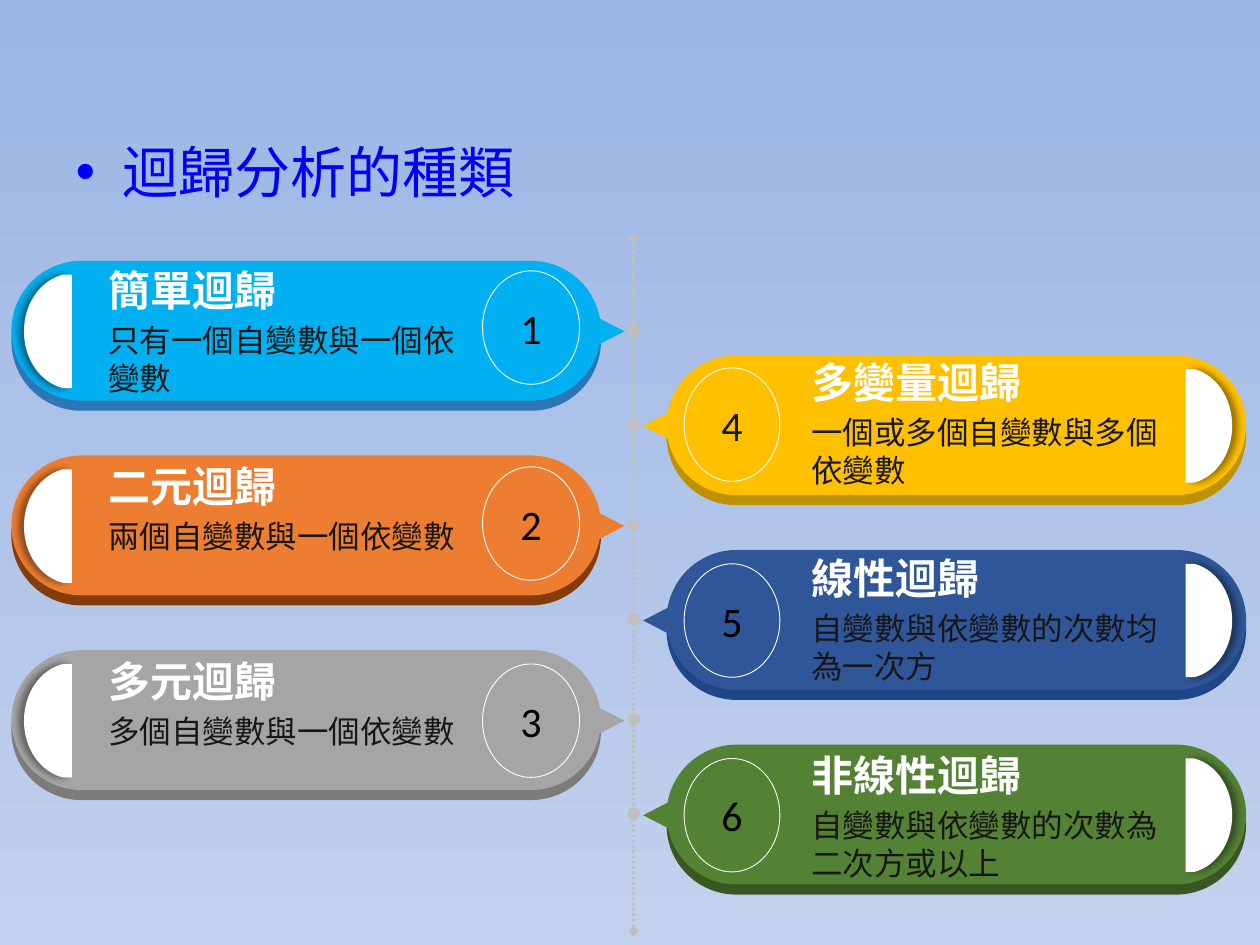
from dataclasses import dataclass

from lxml import etree
from pptx import Presentation
from pptx import util as u
from pptx.dml import color
from pptx.enum import dml, shapes, text
from pptx.oxml import ns

Inches, Pt = u.Inches, u.Pt
SHAPE = shapes.MSO_SHAPE


@dataclass(frozen=True)
class Theme:
    cjk: str = "Noto Sans CJK SC"
    latin: str = "Calibri"
    sky: tuple = ("9AB5E4", "C2D1ED")
    title: str = "0000FF"
    white: str = "FFFFFF"
    ink: str = "181717"
    number: str = "000000"
    rail: str = "BFBFBF"
    title_size: int = 32
    head_size: int = 24
    body_size: int = 18


@dataclass(frozen=True)
class Banner:
    number: str
    head: str
    body: str
    face: str
    edge: str
    disc_y: float
    label_y: float
    label_h: float = 1.14
    ink: str = Theme.number


@dataclass(frozen=True)
class Side:
    x: float
    w: float
    top: float
    disc_x: float
    disc_w: float
    pointer_x: float
    turn: int
    cap_x: float
    cap_w: float
    cap_turn: int
    label_x: float
    label_w: float
    banners: tuple


T = Theme()
STEP, BAR_H, LIP = 1.545, 1.11, 0.08
RAIL_X, DOT, DOT_DROP = 5.03, 0.1, 0.5
CAP_CURVE = ((0, 0), (0.19, 0), (0.65, 0.05), (1, 0.25), (1, 0.5),
             (1, 0.75), (0.65, 0.95), (0.19, 1), (0, 1))

LEFT = Side(0.09, 4.68, 2.07, 3.74, 0.77, 4.6, 90, 0.1, 0.38, 180, 0.7, 3, (
    Banner("1", "簡單迴歸", "只有一個自變數與一個依變數", "00B0F0", "2E75B6", 0.08, 0),
    Banner("2", "二元迴歸", "兩個自變數與一個依變數", "ED7D31", "843C0B", 0.09, 0.01, 0.83),
    Banner("3", "多元迴歸", "多個自變數與一個依變數", "A5A5A5", "7C7C7C", 0.11, 0.01, 0.83),
))
RIGHT = Side(5.29, 4.6, 2.82, 0.14, 0.76, -0.19, 270, 4.12, 0.37, 0, 1.08, 2.95, (
    Banner("4", "多變量迴歸", "一個或多個自變數與多個依變數", "FFC000", "BF9000", 0.1, -0.02,
           ink=T.ink),
    Banner("5", "線性迴歸", "自變數與依變數的次數均為一次方", "2F5698", "204688", 0.11, -0.01),
    Banner("6", "非線性迴歸", "自變數與依變數的次數為二次方或以上", "548235", "385723", 0.11, 0.01),
))


def rgb(value):
    return color.RGBColor.from_string(value)


def style(p, size, ink, name, bold=False):
    p.font.size, p.font.bold, p.font.name = Pt(size), bold, name
    p.font.color.rgb = rgb(ink)
    props = p._p.get_or_add_pPr().get_or_add_defRPr()
    etree.SubElement(props, ns.qn("a:ea"), typeface=name)


def paint(sp, fill):
    sp.shadow.inherit = False
    sp.fill.solid()
    sp.fill.fore_color.rgb = rgb(fill)
    sp.line.fill.background()


def add_solid(group, kind, x, y, w, h, fill):
    sp = group.shapes.add_shape(kind, Inches(x), Inches(y), Inches(w), Inches(h))
    paint(sp, fill)
    return sp


def bend(sp, starts):
    lines = list(sp._element.iter(ns.qn("a:lnTo")))
    for start in starts:
        curve = etree.Element(ns.qn("a:cubicBezTo"))
        lines[start].addprevious(curve)
        for line in lines[start:start + 3]:
            curve.append(line[0])
            line.getparent().remove(line)


def add_cap(group, x, y, w, h, turn):
    points = [(Inches(x + w * fx), Inches(y + h * fy)) for fx, fy in CAP_CURVE]
    builder = group.shapes.build_freeform(*points[0])
    builder.add_line_segments(points[1:], close=True)
    sp = builder.convert_to_shape()
    bend(sp, (1, 4))
    sp.rotation = turn
    paint(sp, T.white)
    effects = sp._element.spPr.find(ns.qn("a:effectLst"))
    shadow = etree.SubElement(effects, ns.qn("a:outerShdw"), blurRad=str(Pt(4)),
                              dist=str(Pt(3)), dir=str(turn * 60000), rotWithShape="0")
    black = etree.SubElement(shadow, ns.qn("a:srgbClr"), val="000000")
    etree.SubElement(black, ns.qn("a:alpha"), val="40000")


def add_disc(group, x, y, w, h, number, ink):
    sp = group.shapes.add_shape(SHAPE.OVAL, Inches(x), Inches(y), Inches(w), Inches(h))
    sp.shadow.inherit = False
    sp.fill.background()
    sp.line.color.rgb, sp.line.width = rgb(T.white), Pt(0.5)
    tf = sp.text_frame
    tf.word_wrap, tf.vertical_anchor = False, text.MSO_ANCHOR.MIDDLE
    tf.margin_left = tf.margin_right = Inches(0.13)
    tf.margin_top = tf.margin_bottom = Inches(0.07)
    p = tf.paragraphs[0]
    p.text, p.alignment = number, text.PP_ALIGN.CENTER
    style(p, T.head_size, ink, T.latin)


def add_label(group, x, y, w, h, head, body):
    tf = group.shapes.add_textbox(Inches(x), Inches(y), Inches(w), Inches(h)).text_frame
    tf.word_wrap, tf.auto_size = True, text.MSO_AUTO_SIZE.SHAPE_TO_FIT_TEXT
    tf.margin_left = tf.margin_right = Inches(0.07)
    tf.margin_top = tf.margin_bottom = Inches(0.03)
    p = tf.paragraphs[0]
    p.text = head
    style(p, T.head_size, T.white, T.cjk, bold=True)
    p = tf.add_paragraph()
    p.text, p.space_before = body, Pt(3.6)
    style(p, T.body_size, T.ink, T.cjk)


def add_banner(s, side, y, b):
    group = s.shapes.add_group_shape()
    for top, fill in ((y + LIP, b.edge), (y, b.face)):
        bar = add_solid(group, SHAPE.ROUNDED_RECTANGLE, side.x, top, side.w, BAR_H, fill)
        bar.adjustments[0] = 0.5
    pointer = add_solid(group, SHAPE.ISOSCELES_TRIANGLE, side.x + side.pointer_x,
                        y + 0.43, 0.27, 0.26, b.face)
    pointer.rotation = side.turn
    add_disc(group, side.x + side.disc_x, y + b.disc_y, side.disc_w, 0.9, b.number, b.ink)
    add_cap(group, side.x + side.cap_x, y + 0.11, side.cap_w, 0.9, side.cap_turn)
    add_label(group, side.x + side.label_x, y + b.label_y, side.label_w, b.label_h,
              b.head, b.body)


def add_rail(s, top, bottom, dot_tops):
    group = s.shapes.add_group_shape()
    line = group.shapes.add_connector(shapes.MSO_CONNECTOR.STRAIGHT, Inches(RAIL_X),
                                      Inches(bottom), Inches(RAIL_X), Inches(top))
    line.line.color.rgb, line.line.width = rgb(T.rail), Pt(1.5)
    line.line.dash_style = dml.MSO_LINE.ROUND_DOT
    for end in ("a:headEnd", "a:tailEnd"):
        etree.SubElement(line.line._get_or_add_ln(), ns.qn(end), type="diamond")
    etree.SubElement(line._element.spPr, ns.qn("a:effectLst"))
    for y in dot_tops:
        add_solid(group, SHAPE.FLOWCHART_CONNECTOR, RAIL_X - DOT / 2, y, DOT, DOT, T.rail)


def add_heading(s, x, y, w, h):
    s.shapes.title._element.getparent().remove(s.shapes.title._element)
    sp = s.placeholders[1]
    sp.left, sp.top, sp.width, sp.height = map(Inches, (x, y, w, h))
    p = sp.text_frame.paragraphs[0]
    p.text, p.space_before = "迴歸分析的種類", Pt(0)
    style(p, T.title_size, T.title, T.cjk)


def add_background(s):
    fill = s.background.fill
    fill.gradient()
    fill.gradient_angle = 270
    for stop, value, position in zip(fill.gradient_stops, T.sky, (0, 1)):
        stop.color.rgb, stop.position = rgb(value), position


def main():
    prs = Presentation()
    prs.slide_width, prs.slide_height = Inches(10), Inches(7.5)
    s = prs.slides.add_slide(prs.slide_layouts[1])
    add_background(s)
    add_heading(s, 0.5, 1.04, 9, 4.95)
    dot_tops = []
    for side in (LEFT, RIGHT):
        for i, banner in enumerate(side.banners):
            y = side.top + i * STEP
            add_banner(s, side, y, banner)
            dot_tops.append(y + DOT_DROP)
    add_rail(s, 1.89, 7.39, sorted(dot_tops))
    prs.save("out.pptx")


if __name__ == "__main__":
    main()
